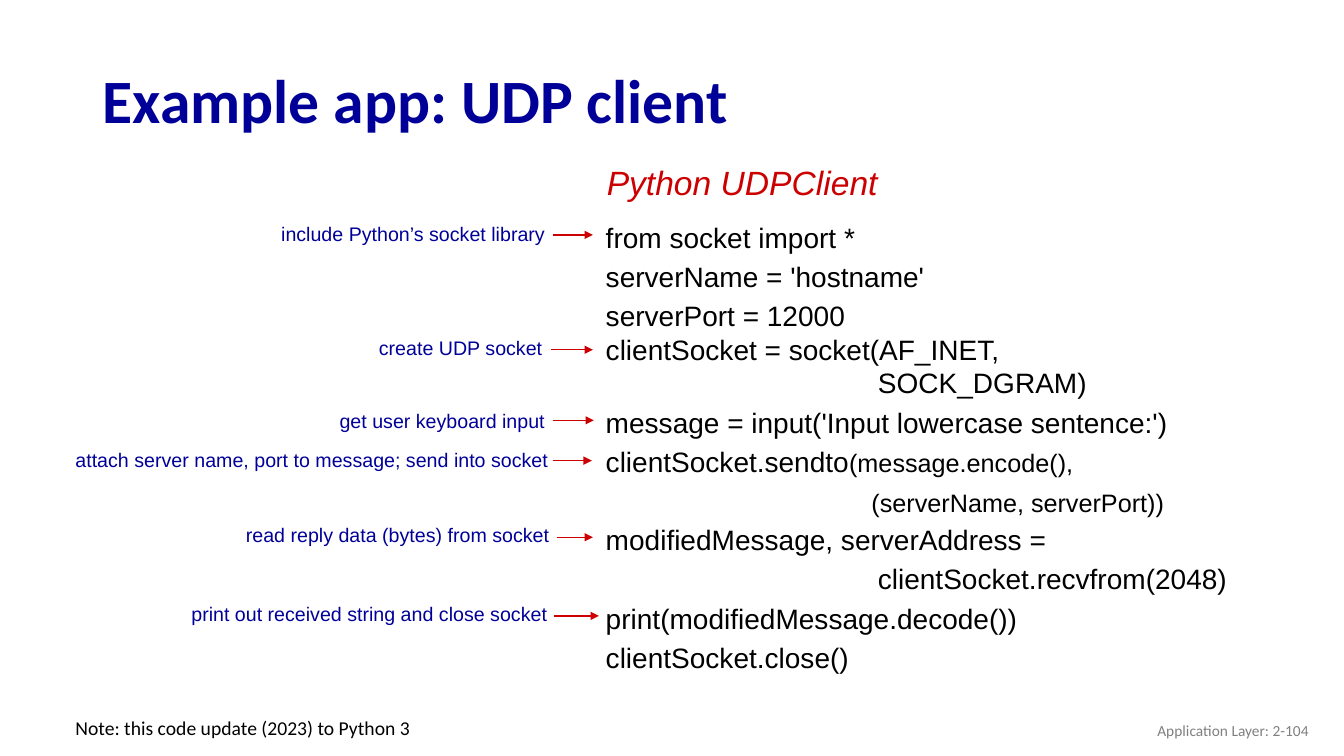
from lxml import etree
from pptx import Presentation
from pptx.dml.color import RGBColor
from pptx.enum.shapes import MSO_CONNECTOR
from pptx.enum.text import MSO_ANCHOR, MSO_AUTO_SIZE, PP_ALIGN
from pptx.oxml.ns import qn
from pptx.util import Inches, Pt

LINE = MSO_CONNECTOR.STRAIGHT
MID, TOP = MSO_ANCHOR.MIDDLE, MSO_ANCHOR.TOP
LEFT, RIGHT = PP_ALIGN.LEFT, PP_ALIGN.RIGHT
FIXED = MSO_AUTO_SIZE.NONE

COLORS = {"navy": "000099", "red": "CC0000", "black": "000000", "gray": "808080"}

# Code lines: (line spacing in points, [(text, size), ...])
CODE = [
    (28, [("from socket import *", 20)]),
    (28, [("serverName = 'hostname'", 20)]),
    (28, [("serverPort = 12000", 20)]),
    (24, [("clientSocket = socket(AF_INET,", 20)]),
    (24, [(" " * 35 + "SOCK_DGRAM)", 20)]),
    (28, [("message = input('Input lowercase sentence:')", 20)]),
    (28, [("clientSocket.sendto", 20), ("(message.encode(),", 18)]),
    (28, [(" " * 38 + "(serverName, serverPort))", 18)]),
    (28, [("modifiedMessage, serverAddress =", 20)]),
    (28, [(" " * 35 + "clientSocket.recvfrom(2048)", 20)]),
    (28, [("print(modifiedMessage.decode())", 20)]),
    (28, [("clientSocket.close()", 20)]),
]

# Labels: text, left, top, arrow start, arrow end, arrow height
NOTES = [
    ("include Python’s socket library", 2.69, 2.15, 5.48, 5.88, 2.33),
    ("create UDP socket", 3.66, 3.28, 5.47, 5.88, 3.47),
    ("get user keyboard input", 3.27, 4.01, 5.48, 5.89, 4.17),
    ("attach server name, port to message; send into socket",
     0.65, 4.39, 5.48, 5.87, 4.57),
    ("read reply data (bytes) from socket", 2.34, 5.14, 5.52, 5.88, 5.33),
    ("print out received string and close socket", 1.8, 5.92, 5.49, 5.94, 6.11),
]


def color(name):
    return RGBColor.from_string(COLORS[name])


def write(para, text, size=14, font="Arial", ink="black", bold=False,
          italic=False, align=LEFT):
    para.alignment = align
    run = para.add_run()
    run.text = text
    run.font.size, run.font.name = Pt(size), font
    run.font.bold, run.font.italic = bold, italic
    run.font.color.rgb = color(ink)


def add_box(slide, box, wrap=True, anchor=TOP):
    frame = slide.shapes.add_textbox(*map(Inches, box)).text_frame
    frame.word_wrap, frame.vertical_anchor = wrap, anchor
    return frame


def add_title(slide, box):
    title = slide.shapes.title
    title.left, title.top, title.width, title.height = map(Inches, box)
    frame = title.text_frame
    frame.auto_size, frame.vertical_anchor = FIXED, MID
    write(frame.paragraphs[0], "Example app: UDP client", size=44,
          font="Calibri", ink="navy", bold=True)


def add_code(slide, box):
    left, top, width, height = box
    # Heading above the listing
    head = add_box(slide, (left + 0.01, top - 0.52, 3, 0.51), wrap=False)
    write(head.paragraphs[0], "Python UDPClient", size=24, ink="red", italic=True)
    # Listing
    frame = add_box(slide, box, wrap=False)
    for i, (space, parts) in enumerate(CODE):
        para = frame.add_paragraph() if i else frame.paragraphs[0]
        para.line_spacing = Pt(space)
        for text, size in parts:
            write(para, text, size=size)


def add_arrow(slide, start, end, y):
    arrow = slide.shapes.add_connector(
        LINE, Inches(start), Inches(y), Inches(end), Inches(y))
    arrow.line.color.rgb = color("red")
    arrow.line.width = Pt(1)
    line = arrow.line._get_or_add_ln()
    etree.SubElement(line, qn("a:tailEnd"), type="triangle")
    etree.SubElement(arrow._element.spPr, qn("a:effectLst"))


def add_notes(slide, edge):
    for text, left, top, start, end, y in NOTES:
        frame = add_box(slide, (left, top, edge - left, 0.34))
        write(frame.paragraphs[0], text, ink="navy")
        add_arrow(slide, start, end, y)


def add_footer(slide, box):
    left, top, width, height = box
    note = add_box(slide, (left, top, 3.56, 0.34), wrap=False)
    write(note.paragraphs[0], "Note: this code update (2023) to Python 3",
          font="Calibri")
    page = add_box(slide, (left + width - 3, top, 3, height), anchor=MID)
    write(page.paragraphs[0], "Application Layer: 2-104", size=11,
          font="Calibri", ink="gray", align=RIGHT)


def main():
    prs = Presentation()
    prs.slide_width, prs.slide_height = Inches(13.33), Inches(7.5)
    slide = prs.slides.add_slide(prs.slide_layouts[5])
    add_title(slide, (0.92, 0.49, 11.5, 0.98))
    add_code(slide, (5.91, 2.08, 6.44, 4.67))
    add_notes(slide, 6)
    add_footer(slide, (0.65, 7.05, 12.43, 0.4))
    prs.save("out.pptx")


if __name__ == "__main__":
    main()
